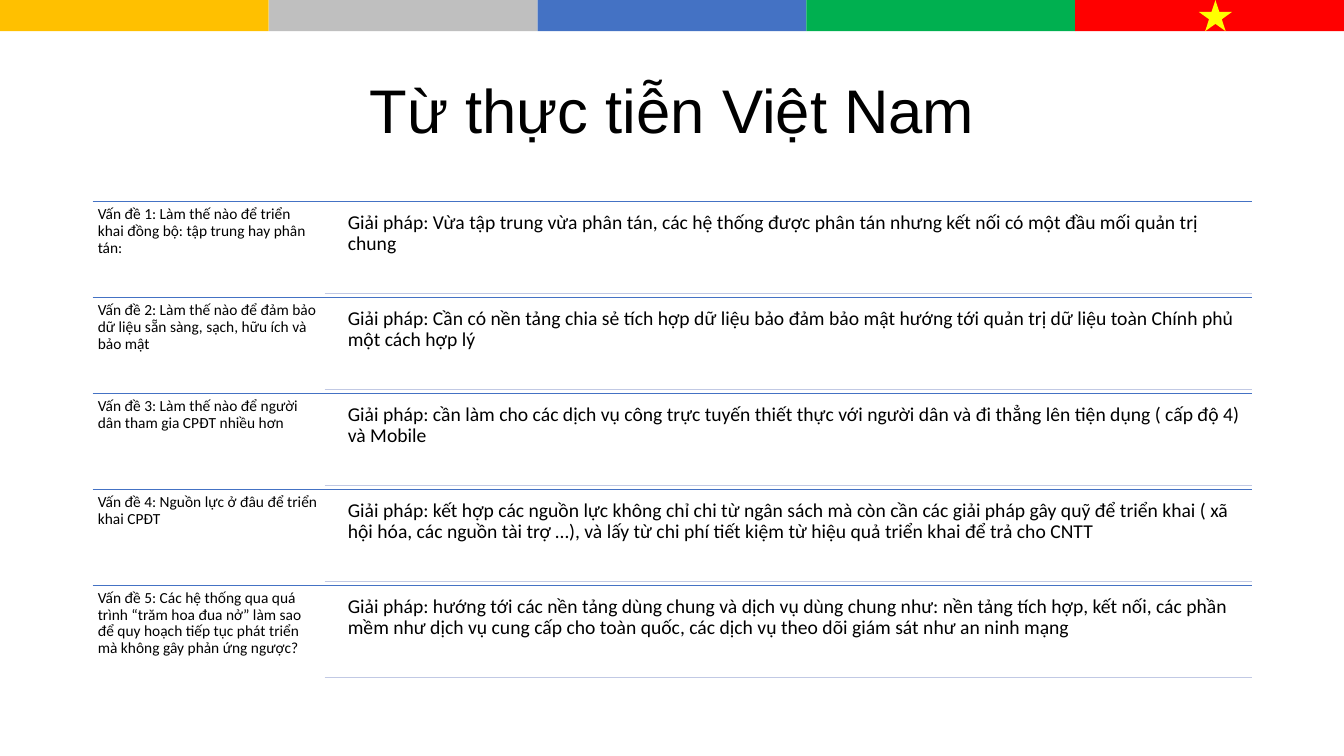
from lxml import etree
from pptx import Presentation
from pptx import util as u
from pptx.dml.color import RGBColor
from pptx.enum import shapes, text
from pptx.oxml.ns import qn

SLIDE_WIDTH, SLIDE_HEIGHT = 13.33, 7.5
STRIPE_COLORS = ["FFC000", "BFBFBF", "4472C4", "00B050", "FF0000"]
TITLE = "Từ thực tiễn Việt Nam"
ISSUES = [
    ("Vấn đề 1: Làm thế nào để triển khai đồng bộ: tập trung hay phân tán:",
     "Giải pháp: Vừa tập trung vừa phân tán, các hệ thống được phân tán nhưng "
     "kết nối có một đầu mối quản trị chung"),
    ("Vấn đề 2: Làm thế nào để đảm bảo dữ liệu sẵn sàng, sạch, hữu ích và bảo mật",
     "Giải pháp: Cần có nền tảng chia sẻ tích hợp dữ liệu bảo đảm bảo mật hướng "
     "tới quản trị dữ liệu toàn Chính phủ một cách hợp lý"),
    ("Vấn đề 3: Làm thế nào để người dân tham gia CPĐT nhiều hơn",
     "Giải pháp: cần làm cho các dịch vụ công trực tuyến thiết thực với người dân "
     "và đi thẳng lên tiện dụng ( cấp độ 4) và Mobile"),
    ("Vấn đề 4: Nguồn lực ở đâu để triển khai CPĐT",
     "Giải pháp: kết hợp các nguồn lực không chỉ chi từ ngân sách mà còn cần các "
     "giải pháp gây quỹ để triển khai ( xã hội hóa, các nguồn tài trợ …), và lấy "
     "từ chi phí tiết kiệm từ hiệu quả triển khai để trả cho CNTT"),
    ("Vấn đề 5: Các hệ thống qua quá trình “trăm hoa đua nở” làm sao để quy hoạch "
     "tiếp tục phát triển mà không gây phản ứng ngược?",
     "Giải pháp: hướng tới các nền tảng dùng chung và dịch vụ dùng chung như: nền "
     "tảng tích hợp, kết nối, các phần mềm như dịch vụ cung cấp cho toàn quốc, các "
     "dịch vụ theo dõi giám sát như an ninh mạng"),
]


def color(hex_code):
    return RGBColor.from_string(hex_code)


def inches(*lengths):
    return [u.Inches(length) for length in lengths]


def add_filled(slide, kind, box, fill):
    shape = slide.shapes.add_shape(kind, *inches(*box))
    shape.shadow.inherit = False
    shape.fill.solid()
    shape.fill.fore_color.rgb = color(fill)
    shape.line.fill.background()


def add_rule(slide, left, right, y, line_color):
    """Draw a thin horizontal line."""
    rule = slide.shapes.add_connector(
        shapes.MSO_CONNECTOR.STRAIGHT, *inches(left, y, right, y))
    rule.line.color.rgb = color(line_color)
    rule.line.width = u.Pt(1)
    etree.SubElement(rule.element.spPr, qn("a:effectLst"))


def add_words(slide, box, words, size, font, insets,
              align=text.PP_ALIGN.LEFT, anchor=text.MSO_ANCHOR.TOP):
    frame = slide.shapes.add_textbox(*inches(*box)).text_frame
    frame.word_wrap = True
    frame.vertical_anchor = anchor
    frame.margin_left = frame.margin_right = u.Inches(insets[0])
    frame.margin_top = frame.margin_bottom = u.Inches(insets[1])
    paragraph = frame.paragraphs[0]
    paragraph.alignment = align
    paragraph.line_spacing = 0.9
    run = paragraph.add_run()
    run.text = words
    run.font.size = u.Pt(size)
    run.font.name = font
    run.font.color.rgb = color("000000")


def add_stripe(slide, left, top, width, height):
    """Draw the coloured band with a star in its last part."""
    part = width / len(STRIPE_COLORS)
    for index, fill in enumerate(STRIPE_COLORS):
        add_filled(slide, shapes.MSO_SHAPE.RECTANGLE,
                   (left + index * part, top, part, height), fill)
    add_filled(slide, shapes.MSO_SHAPE.STAR_5_POINT,
               (left + 11.89, top, 0.33, height), "FFFF00")


def add_title(slide, *box):
    add_words(slide, box, TITLE, 44, "Arial", (0.1, 0.05),
              text.PP_ALIGN.CENTER, text.MSO_ANCHOR.MIDDLE)


def add_issue(slide, left, top, width, height, problem, solution):
    """Place a problem on the left and its solution on the right."""
    right = left + width
    problem_width = width / 5
    solution_left = left + problem_width + 0.17
    gap = 0.05
    solution_height = height - 0.09
    add_rule(slide, left, right, top, "4472C4")
    add_words(slide, (left, top, problem_width, height),
              problem, 11, "Calibri", (0.05, 0.05))
    add_words(slide, (solution_left, top + gap, right - solution_left, solution_height),
              solution, 14, "Calibri", (0.06, 0.06))
    add_rule(slide, left + problem_width, right, top + gap + solution_height, "C1C9E4")


def add_issues(slide, left, top, width, height):
    row = height / len(ISSUES)
    for index, (problem, solution) in enumerate(ISSUES):
        add_issue(slide, left, top + index * row, width, row, problem, solution)


def main():
    deck = Presentation()
    deck.slide_width, deck.slide_height = inches(SLIDE_WIDTH, SLIDE_HEIGHT)
    slide = deck.slides.add_slide(deck.slide_layouts[6])
    add_stripe(slide, 0, 0, SLIDE_WIDTH, 0.31)
    add_title(slide, 0.92, 0.4, 11.5, 1.45)
    add_issues(slide, 0.92, 2, 11.5, 4.76)
    deck.save("out.pptx")


if __name__ == "__main__":
    main()
